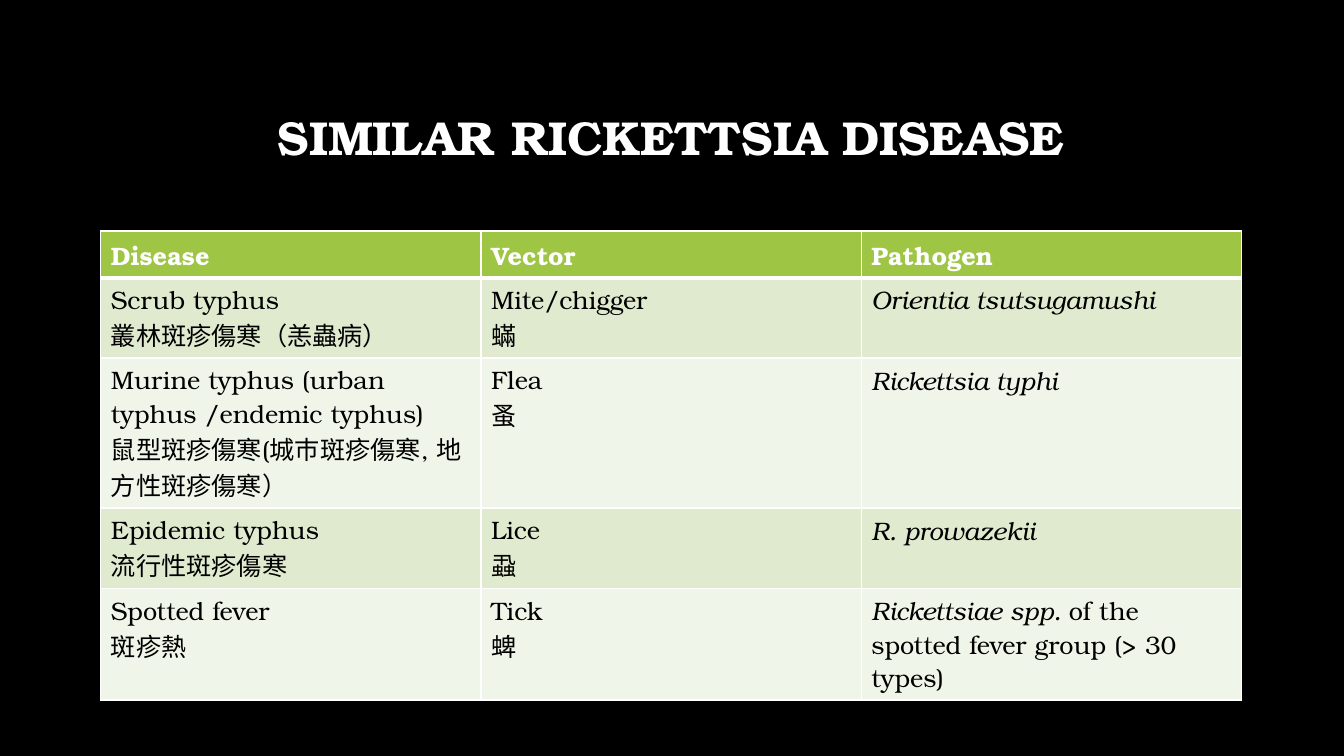
from dataclasses import dataclass

from lxml import etree
from pptx import Presentation
from pptx import util as u
from pptx.dml.color import RGBColor
from pptx.enum import text
from pptx.oxml import ns

BLACK = RGBColor(0x00, 0x00, 0x00)
WHITE = RGBColor(0xFF, 0xFF, 0xFF)
HEADER_GREEN = RGBColor(0x9E, 0xC5, 0x44)
BAND_GREENS = (RGBColor(0xDF, 0xEA, 0xCF), RGBColor(0xF0, 0xF5, 0xE9))

FONT = "TeX Gyre Bonum"
LEFT, WIDTH = u.Cm(2.54), u.Cm(28.75)
HEADER_HEIGHT = u.Cm(1.18)
THIN, THICK = u.Pt(1), u.Pt(3)


@dataclass(frozen=True)
class Disease:
    height: u.Length
    names: tuple[str, ...]
    vectors: tuple[str, ...]
    pathogen: str
    pathogen_note: str = ""


HEADINGS = ("Disease", "Vector", "Pathogen")
DISEASES = (
    Disease(u.Cm(2.02), ("Scrub typhus", "叢林斑疹傷寒（恙蟲病）"),
            ("Mite/chigger", "蟎"), "Orientia tsutsugamushi"),
    Disease(u.Cm(3.78), ("Murine typhus (urban typhus /endemic typhus)",
                         "鼠型斑疹傷寒(城巿斑疹傷寒, 地方性斑疹傷寒）"),
            ("Flea", "蚤"), "Rickettsia typhi"),
    Disease(u.Cm(2.02), ("Epidemic typhus", "流行性斑疹傷寒"),
            ("Lice", "蝨"), "R. prowazekii"),
    Disease(u.Cm(2.82), ("Spotted fever", "斑疹熱"), ("Tick", "蜱"),
            "Rickettsiae spp. ", "of the spotted fever group (> 30 types)"),
)

TITLE_FORMAT = {"name": FONT, "size": u.Pt(34), "bold": True}
HEADING_FORMAT = {"name": FONT, "size": u.Pt(18), "bold": True}
BODY_FORMAT = {"name": FONT, "size": u.Pt(18), "bold": False, "italic": False}
SPECIES_FORMAT = BODY_FORMAT | {"italic": True}


def add_words(paragraph, words: str, style: dict, color: RGBColor) -> None:
    run = paragraph.add_run()
    run.text = words
    for attribute, value in style.items():
        setattr(run.font, attribute, value)
    run.font.color.rgb = color


def add_lines(cell, lines: tuple[str, ...], style: dict, color: RGBColor) -> None:
    frame = cell.text_frame
    for index, line in enumerate(lines):
        paragraph = frame.add_paragraph() if index else frame.paragraphs[0]
        add_words(paragraph, line, style, color)


def paint_cell(cell, color: RGBColor, top: int, bottom: int) -> None:
    cell.fill.solid()
    cell.fill.fore_color.rgb = color
    properties = cell._tc.get_or_add_tcPr()
    # Borders stand before the fill in the cell properties
    edges = {"a:lnL": THIN, "a:lnR": THIN, "a:lnT": top, "a:lnB": bottom}
    for position, (edge, width) in enumerate(edges.items()):
        line = etree.Element(ns.qn(edge), w=str(int(width)))
        solid = etree.SubElement(line, ns.qn("a:solidFill"))
        etree.SubElement(solid, ns.qn("a:srgbClr"), val=str(WHITE))
        properties.insert(position, line)


def add_title(slide) -> None:
    title = slide.shapes.add_textbox(LEFT, u.Cm(1.7), WIDTH, u.Cm(3.68))
    frame = title.text_frame
    frame.word_wrap = True
    frame.vertical_anchor = text.MSO_ANCHOR.MIDDLE
    heading = frame.paragraphs[0]
    heading.alignment = text.PP_ALIGN.CENTER
    heading.line_spacing = 0.9
    add_words(heading, "SIMILAR RICKETTSIA DISEASE", TITLE_FORMAT, WHITE)


def add_disease_table(slide) -> None:
    heights = [HEADER_HEIGHT] + [disease.height for disease in DISEASES]
    table = slide.shapes.add_table(len(heights), len(HEADINGS), LEFT, u.Cm(5.82),
                                   WIDTH, u.Emu(sum(heights))).table
    table.horz_banding = False
    for row, height in zip(table.rows, heights):
        row.height = height

    # Header row
    for cell, heading in zip(table.rows[0].cells, HEADINGS):
        paint_cell(cell, HEADER_GREEN, THIN, THICK)
        add_lines(cell, (heading,), HEADING_FORMAT, WHITE)

    # Disease rows
    for index, disease in enumerate(DISEASES):
        name, vector, pathogen = cells = tuple(table.rows[index + 1].cells)
        for cell in cells:
            paint_cell(cell, BAND_GREENS[index % 2], THIN if index else THICK, THIN)
        add_lines(name, disease.names, BODY_FORMAT, BLACK)
        add_lines(vector, disease.vectors, BODY_FORMAT, BLACK)
        add_lines(pathogen, (disease.pathogen,), SPECIES_FORMAT, BLACK)
        if disease.pathogen_note:
            add_words(pathogen.text_frame.paragraphs[0],
                      disease.pathogen_note, BODY_FORMAT, BLACK)


def main() -> None:
    deck = Presentation()
    deck.slide_width, deck.slide_height = u.Cm(33.87), u.Cm(19.05)
    slide = deck.slides.add_slide(deck.slide_layouts[6])
    slide.background.fill.solid()
    slide.background.fill.fore_color.rgb = BLACK
    add_title(slide)
    add_disease_table(slide)
    deck.save("out.pptx")


if __name__ == "__main__":
    main()
